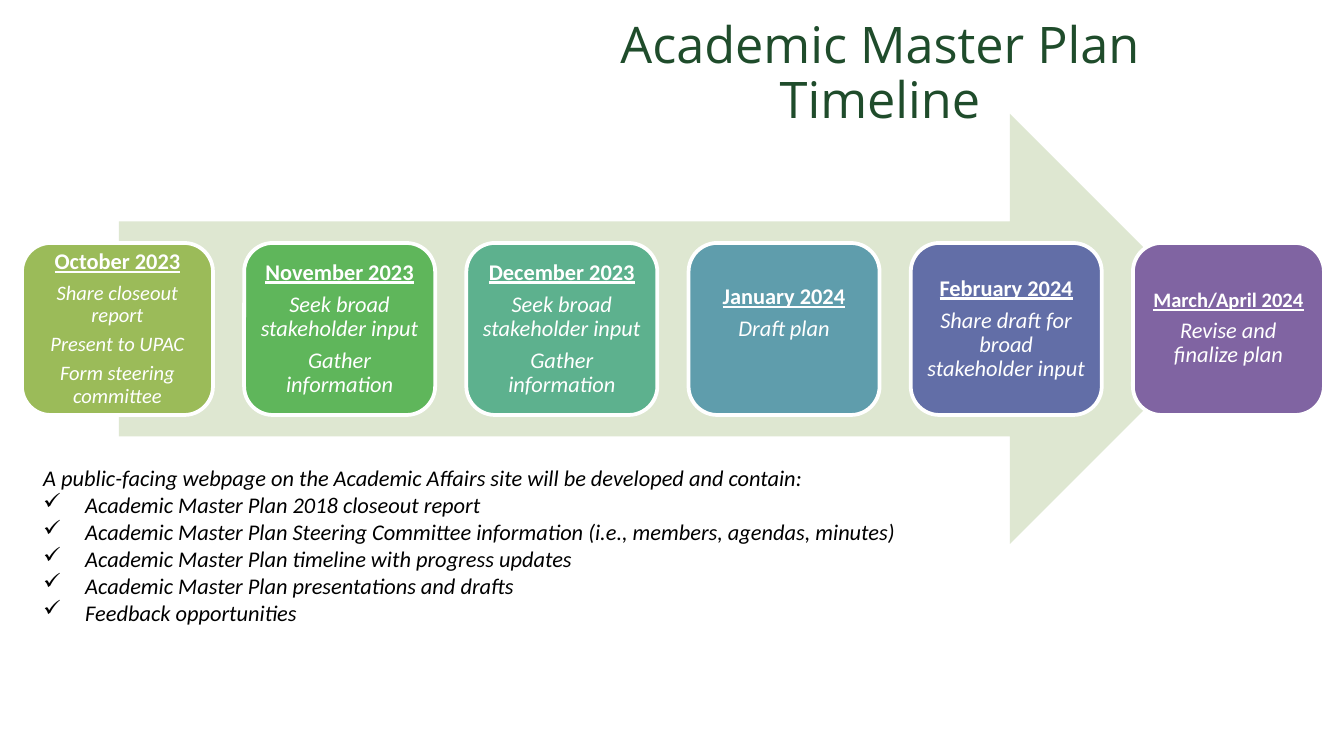
from lxml.etree import SubElement
from pptx import Presentation
from pptx.dml.color import RGBColor
from pptx.enum.shapes import MSO_SHAPE as Shape
from pptx.enum.text import MSO_ANCHOR as Anchor, PP_ALIGN as Align
from pptx.oxml.ns import qn
from pptx.util import Pt

EMU_PER_PX = 914400 * 10 / 1344
COLORS = {
    "title": "1F4C2B", "arrow": "DEE7D1", "white": "FFFFFF", "black": "000000",
    "october": "9BBB59", "november": "5FB65B", "december": "5DB18E",
    "january": "5F9DAC", "february": "626EA7", "march": "8064A2",
}


def px(value):
    return round(value * EMU_PER_PX)


def style(para, size, color, name="Calibri", bold=False, italic=False, underline=False):
    for span in para.runs:
        font = span.font
        font.name, font.size = name, Pt(size)
        font.bold, font.italic, font.underline = bold, italic, underline
        font.color.rgb = RGBColor.from_string(COLORS[color])


deck = Presentation()
deck.slide_width, deck.slide_height = px(1344), px(756)
page = deck.slides.add_slide(deck.slide_layouts[6])

# Timeline arrow
arrow = page.shapes.add_shape(Shape.RIGHT_ARROW, px(119), px(114), px(1106), px(430))
arrow.shadow.inherit = False
arrow.fill.solid()
arrow.fill.fore_color.rgb = RGBColor.from_string(COLORS["arrow"])
arrow.line.fill.background()

# Title
box = page.shapes.add_textbox(px(515), px(35), px(730), px(79))
frame = box.text_frame
frame.word_wrap = True
frame.vertical_anchor = Anchor.MIDDLE
frame.text = "Academic Master Plan Timeline"
para = frame.paragraphs[0]
para.alignment = Align.CENTER
para.line_spacing = 0.9
style(para, 27, "title", name="Open Sans")

# Month cards: color, heading, heading size, body size, bottom inset, steps
cards = [
    ("october", "October 2023", 12, 11, 7,
     ["Share closeout report", "Present to UPAC", "Form steering committee"]),
    ("november", "November 2023", 12, 12, 7,
     ["Seek broad stakeholder input", "Gather information"]),
    ("december", "December 2023", 12, 12, 7,
     ["Seek broad stakeholder input", "Gather information"]),
    ("january", "January 2024", 12, 12, 39, ["Draft plan"]),
    ("february", "February 2024", 12, 12, 7,
     ["Share draft for broad stakeholder input"]),
    ("march", "March/April 2024", 11, 12, 7, ["Revise and finalize plan"]),
]
first_left, last_left = 22, 1133
pitch = (last_left - first_left) / (len(cards) - 1)
for index, (color, heading, heading_size, body_size, bottom, steps) in enumerate(cards):
    card = page.shapes.add_shape(
        Shape.ROUNDED_RECTANGLE, px(first_left + index * pitch), px(243), px(191), px(172))
    card.shadow.inherit = False
    card.fill.solid()
    card.fill.fore_color.rgb = RGBColor.from_string(COLORS[color])
    card.line.color.rgb = RGBColor.from_string(COLORS["white"])
    card.line.width = Pt(2)

    frame = card.text_frame
    frame.word_wrap = True
    frame.vertical_anchor = Anchor.MIDDLE
    frame.margin_left = frame.margin_right = frame.margin_top = px(7)
    frame.margin_bottom = px(bottom)
    frame.text = "\n".join([heading, *steps])
    for row, para in enumerate(frame.paragraphs):
        size = body_size if row else heading_size
        para.alignment = Align.CENTER
        para.line_spacing = 0.9
        para.space_after = Pt(size * 0.35)
        style(para, size, "white", bold=row == 0, underline=row == 0, italic=row > 0)

# Webpage contents with check marks
lines = [
    "A public-facing webpage on the Academic Affairs site will be developed and contain:",
    "Academic Master Plan 2018 closeout report",
    "Academic Master Plan Steering Committee information (i.e., members, agendas, minutes)",
    "Academic Master Plan timeline with progress updates",
    "Academic Master Plan presentations and drafts",
    "Feedback opportunities",
]
box = page.shapes.add_textbox(px(30), px(458), px(962), px(239))
frame = box.text_frame
frame.word_wrap = True
frame.text = "\n".join(lines)
for row, para in enumerate(frame.paragraphs):
    if row:
        props = para._p.get_or_add_pPr()
        props.set("marL", str(px(42)))
        props.set("indent", str(-px(42)))
        SubElement(props, qn("a:buFont"), typeface="Wingdings")
        SubElement(props, qn("a:buChar"), char="ü")
    style(para, 12, "black", italic=True)

deck.save("out.pptx")
